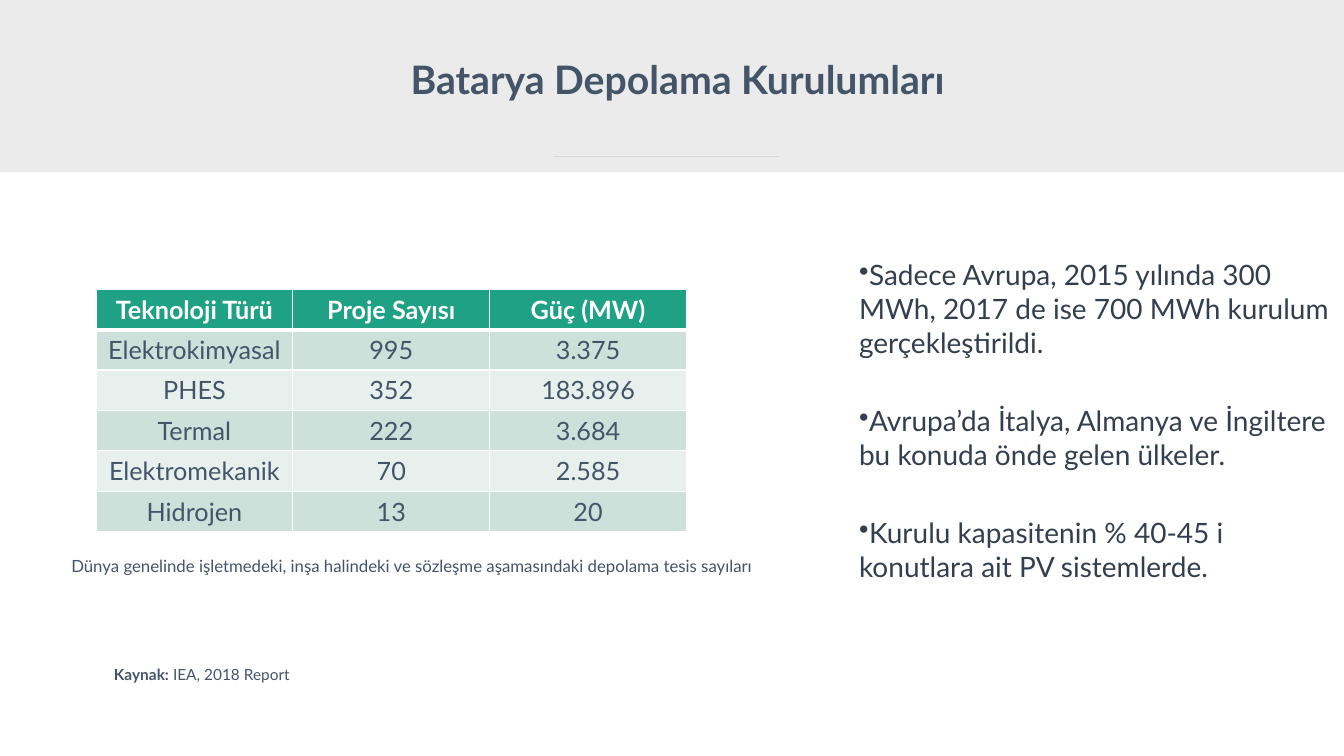
from lxml import etree
from pptx import Presentation
from pptx.dml.color import RGBColor
from pptx.enum.shapes import MSO_CONNECTOR, MSO_SHAPE
from pptx.enum.text import MSO_ANCHOR, PP_ALIGN
from pptx.oxml.ns import qn
from pptx.util import Cm, Pt

RECT = MSO_SHAPE.RECTANGLE
LINE = MSO_CONNECTOR.STRAIGHT
MIDDLE, TOP = MSO_ANCHOR.MIDDLE, MSO_ANCHOR.TOP
CENTER, LEFT = PP_ALIGN.CENTER, PP_ALIGN.LEFT

SLATE, NAVY, GREY, WHITE = "445469", "333F4F", "D9D9D9", "FFFFFF"
GREEN, MINT, PALE = "1EA185", "CDE0D9", "E8F0ED"

ROWS = [
    ("Teknoloji Türü", "Proje Sayısı", "Güç (MW)"),
    ("Elektrokimyasal", "995", "3.375"),
    ("PHES", "352", "183.896"),
    ("Termal", "222", "3.684"),
    ("Elektromekanik", "70", "2.585"),
    ("Hidrojen", "13", "20"),
]
POINTS = [
    "Sadece Avrupa, 2015 yılında 300 MWh, 2017 de ise 700 MWh kurulum gerçekleştirildi.",
    "Avrupa’da İtalya, Almanya ve İngiltere bu konuda önde gelen ülkeler.",
    "Kurulu kapasitenin % 40-45 i konutlara ait PV sistemlerde.",
]


def rgb(code):
    return RGBColor.from_string(code)


def paint(fill, code):
    fill.solid()
    fill.fore_color.rgb = rgb(code)


class Page:
    """The slide being built and its font."""

    def __init__(self, slide, font):
        self.slide, self.font = slide, font

    def style(self, run, size, color, bold=False):
        run.font.name, run.font.size, run.font.bold = self.font, Pt(size), bold
        run.font.color.rgb = rgb(color)

    def band(self, area, color, alpha):
        """Draw a borderless rectangle, alpha being its opacity in percent."""
        shape = self.slide.shapes.add_shape(RECT, *map(Cm, area))
        shape.shadow.inherit = False
        shape.line.fill.background()
        paint(shape.fill, color)
        tone = shape.fill._xPr.find(".//" + qn("a:srgbClr"))
        etree.SubElement(tone, qn("a:alpha"), val=str(alpha * 1000))

    def rule(self, ends, color, width):
        line = self.slide.shapes.add_connector(LINE, *map(Cm, ends))
        line.line.color.rgb = rgb(color)
        line.line.width = Pt(width)
        etree.SubElement(line._element.spPr, qn("a:effectLst"))

    def text(self, area, words, size, color=SLATE, bold=False, wrap=False,
             align=CENTER, anchor=TOP):
        """Add a text box with one paragraph for each item of words."""
        frame = self.slide.shapes.add_textbox(*map(Cm, area)).text_frame
        frame.word_wrap, frame.vertical_anchor = wrap, anchor
        frame.text = "\n".join(words)
        for para in frame.paragraphs:
            para.alignment = align
            self.style(para.runs[0], size, color, bold)
        return frame

    def bullets(self, area, words, size, color, gap):
        frame = self.text(area, words, size, color, wrap=True, align=LEFT)
        frame.margin_left = frame.margin_right = Cm(0.69)
        frame.margin_top = frame.margin_bottom = Cm(0.33)
        for index, para in enumerate(frame.paragraphs):
            para.space_before = Pt(gap if index else 0)
            mark = etree.SubElement(para._p.get_or_add_pPr(), qn("a:buChar"))
            mark.set("char", "•")

    def border(self, cell, foot):
        """Give a cell white edges, the lower one foot points wide."""
        props = cell._tc.get_or_add_tcPr()
        edges = {"a:lnL": 1, "a:lnR": 1, "a:lnT": 1, "a:lnB": foot}
        for index, (tag, width) in enumerate(edges.items()):
            edge = etree.Element(qn(tag), w=str(Pt(width)))
            fill = etree.SubElement(edge, qn("a:solidFill"))
            etree.SubElement(fill, qn("a:srgbClr"), val=WHITE)
            props.insert(index, edge)

    def table(self, area, rows, size):
        frame = self.slide.shapes.add_table(len(rows), len(rows[0]), *map(Cm, area))
        for r, row in enumerate(rows):
            head = r == 0
            back = GREEN if head else (MINT if r % 2 else PALE)
            for c, word in enumerate(row):
                cell = frame.table.cell(r, c)
                cell.text = word
                para = cell.text_frame.paragraphs[0]
                para.alignment = CENTER
                self.style(para.runs[0], size, WHITE if head else SLATE, head)
                paint(cell.fill, back)
                self.border(cell, 3 if head or r == 1 and False else 1)
                if r == 1:
                    cell._tc.tcPr.find(qn("a:lnT")).set("w", str(Pt(3)))


def main():
    deck = Presentation()
    deck.slide_width, deck.slide_height = Cm(33.87), Cm(19.05)
    page = Page(deck.slides.add_slide(deck.slide_layouts[6]), "Lato")

    page.band((0, 0, 33.87, 4.34), GREY, 50)
    title = page.text((1.3, 1.27, 31.55, 1.57), ["Batarya Depolama Kurulumları"],
                      28, bold=True, wrap=True, anchor=MIDDLE)
    title.paragraphs[0].line_spacing = 0.9
    page.rule((13.95, 3.94, 19.63, 3.94), GREY, 0.5)

    page.bullets((20.96, 6.17, 13.22, 10.46), POINTS, 20, NAVY, 32)
    page.table((2.42, 7.29, 14.88, 6.1), ROWS, 18)
    page.text((1.14, 13.87, 18.49, 0.77),
              ["Dünya genelinde işletmedeki, inşa halindeki ve sözleşme "
               "aşamasındaki depolama tesis sayıları"], 12)

    source = page.text((2.51, 16.64, 5.16, 0.73), ["Kaynak:"], 11, bold=True)
    report = source.paragraphs[0].add_run()
    report.text = " IEA, 2018 Report"
    page.style(report, 11, SLATE)

    deck.save("out.pptx")


if __name__ == "__main__":
    main()
